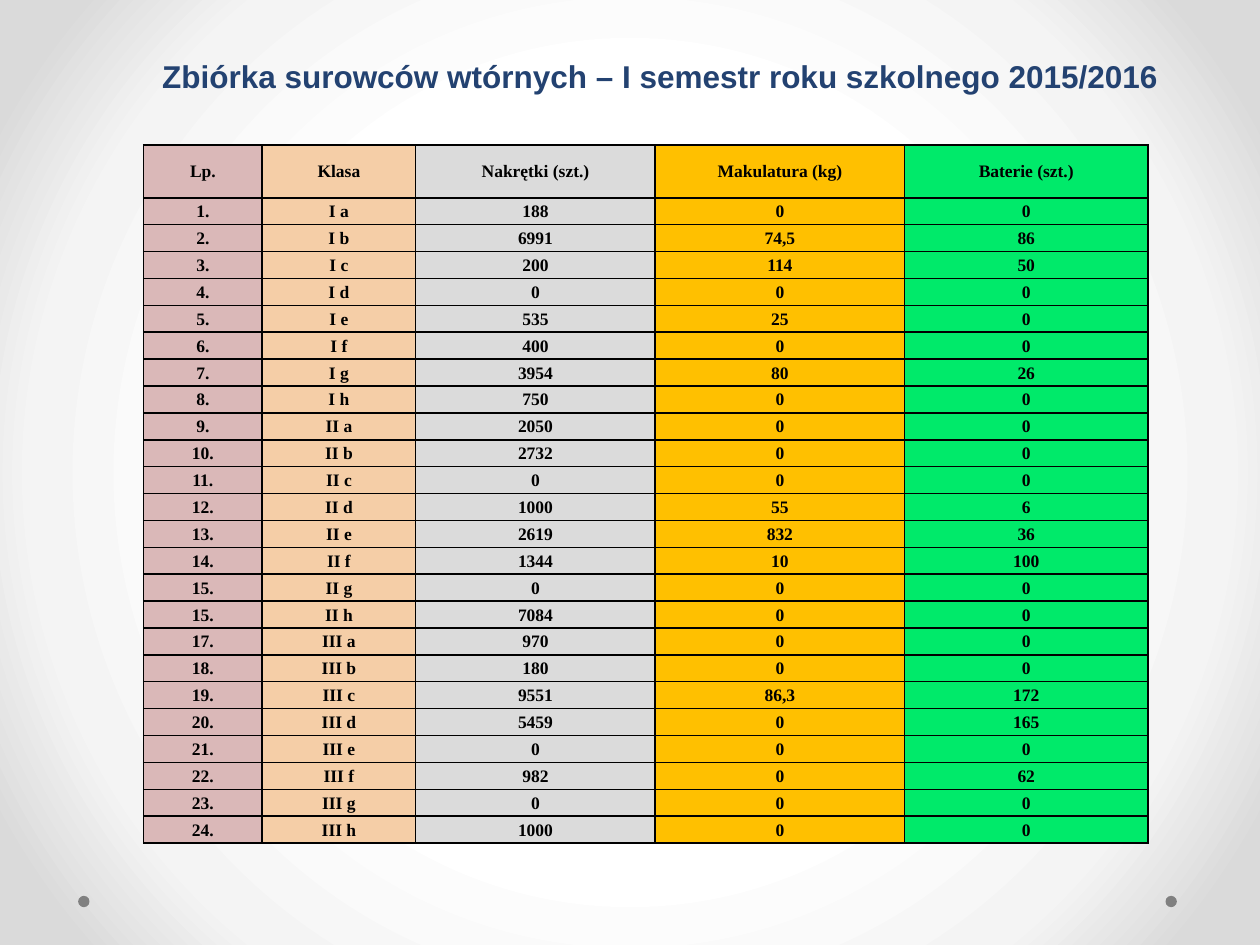
from pptx import Presentation as Show
from pptx.dml.color import RGBColor as Rgb
from pptx.enum.shapes import MSO_SHAPE as Shape
from pptx.enum.text import MSO_ANCHOR as Anchor, PP_ALIGN as Align
from pptx.oxml import parse_xml as read
from pptx.oxml.ns import nsdecls as spaces, qn
from pptx.util import Pt

UNIT = 9144
HEADS = ["Lp.", "Klasa", "Nakrętki (szt.)", "Makulatura (kg)", "Baterie (szt.)"]
FILLS = ["DAB8B8", "F5CEA7", "D9D9D9", "FFC000", "00EA6A"]
WIDTHS = [94, 122, 190, 198, 193]
ROWS = [
    ("1.", "I a", "188", "0", "0"),
    ("2.", "I b", "6991", "74,5", "86"),
    ("3.", "I c", "200", "114", "50"),
    ("4.", "I d", "0", "0", "0"),
    ("5.", "I e", "535", "25", "0"),
    ("6.", "I f", "400", "0", "0"),
    ("7.", "I g", "3954", "80", "26"),
    ("8.", "I h", "750", "0", "0"),
    ("9.", "II a", "2050", "0", "0"),
    ("10.", "II b", "2732", "0", "0"),
    ("11.", "II c", "0", "0", "0"),
    ("12.", "II d", "1000", "55", "6"),
    ("13.", "II e", "2619", "832", "36"),
    ("14.", "II f", "1344", "10", "100"),
    ("15.", "II g", "0", "0", "0"),
    ("15.", "II h", "7084", "0", "0"),
    ("17.", "III a", "970", "0", "0"),
    ("18.", "III b", "180", "0", "0"),
    ("19.", "III c", "9551", "86,3", "172"),
    ("20.", "III d", "5459", "0", "165"),
    ("21.", "III e", "0", "0", "0"),
    ("22.", "III f", "982", "0", "62"),
    ("23.", "III g", "0", "0", "0"),
    ("24.", "III h", "1000", "0", "0"),
]


def px(*sizes):
    return [size * UNIT for size in sizes]


def tint(code):
    return Rgb.from_string(code)


class Deck:
    """Holds the style and the current slide, and draws each kind of element."""

    title_font = "Arial"
    table_font = "Times New Roman"
    ink = "000000"
    navy = "234271"
    gray = "808080"

    def __init__(self, wide, high):
        self.show = Show()
        self.show.slide_width, self.show.slide_height = px(wide, high)
        self.slide = self.show.slides.add_slide(self.show.slide_layouts[6])

    def glow(self, stops):
        marks = "".join(
            f'<a:gs pos="{pos * 1000}"><a:srgbClr val="{code}"/></a:gs>'
            for pos, code in stops
        )
        back = read(
            f'<p:bg {spaces("p", "a")}><p:bgPr><a:gradFill rotWithShape="1">'
            f'<a:gsLst>{marks}</a:gsLst><a:path path="circle">'
            '<a:fillToRect l="50000" t="50000" r="50000" b="50000"/></a:path>'
            "</a:gradFill><a:effectLst/></p:bgPr></p:bg>"
        )
        self.slide.element.cSld.insert(0, back)

    def dot(self, left, top, size):
        dot = self.slide.shapes.add_shape(Shape.OVAL, *px(left, top, size, size))
        dot.shadow.inherit = False
        dot.fill.solid()
        dot.fill.fore_color.rgb = tint(self.gray)
        dot.line.fill.background()

    def style(self, par, font, size, code):
        par.alignment = Align.CENTER
        for run in par.runs:
            run.font.name = font
            run.font.size = Pt(size)
            run.font.bold = True
            run.font.color.rgb = tint(code)

    def title(self, text, *box):
        frame = self.slide.shapes.add_textbox(*px(*box)).text_frame
        frame.word_wrap = True
        frame.text = text
        par = frame.paragraphs[0]
        par.line_spacing = 1.15
        par.space_after = Pt(10)
        self.style(par, self.title_font, 18, self.navy)

    def border(self, cell):
        props = cell._tc.get_or_add_tcPr()
        for spot, side in enumerate("LRTB"):
            line = read(
                f'<a:ln{side} {spaces("a")} w="{Pt(1)}"><a:solidFill>'
                f'<a:srgbClr val="{self.ink}"/></a:solidFill></a:ln{side}>'
            )
            props.insert(spot, line)

    def cell(self, cell, text, code):
        cell.text = text
        cell.vertical_anchor = Anchor.MIDDLE
        cell.margin_left, cell.margin_right, cell.margin_top = px(1, 1, 1)
        cell.margin_bottom = 0
        cell.fill.solid()
        cell.fill.fore_color.rgb = tint(code)
        if code == "D9D9D9":
            fill = cell._tc.tcPr.find(qn("a:solidFill"))
            fill[0].append(read(f'<a:alpha {spaces("a")} val="94000"/>'))
        self.border(cell)
        self.style(cell.text_frame.paragraphs[0], self.table_font, 10, self.ink)

    def table(self, left, top, high, head):
        lines = [HEADS, *ROWS]
        box = px(left, top, sum(WIDTHS), high)
        table = self.slide.shapes.add_table(len(lines), len(HEADS), *box).table
        table.first_row = table.horz_banding = False
        for col, wide in zip(table.columns, px(*WIDTHS)):
            col.width = wide
        for row in table.rows:
            row.height = (high - head) * UNIT // len(ROWS)
        table.rows[0].height = head * UNIT
        for row, line in zip(table.rows, lines):
            for cell, text, code in zip(row.cells, line, FILLS):
                self.cell(cell, text, code)


def main():
    deck = Deck(1000, 750)
    deck.glow([(50, "FFFFFF"), (76, "F4F4F4"), (92, "DADADA")])
    for left in (925, 62):
        deck.dot(left, 711, 9)
    deck.title(
        "Zbiórka surowców wtórnych – I semestr roku szkolnego 2015/2016",
        83, 36, 882, 89,
    )
    deck.table(114, 115, 555, 42)
    deck.show.save("out.pptx")


if __name__ == "__main__":
    main()
